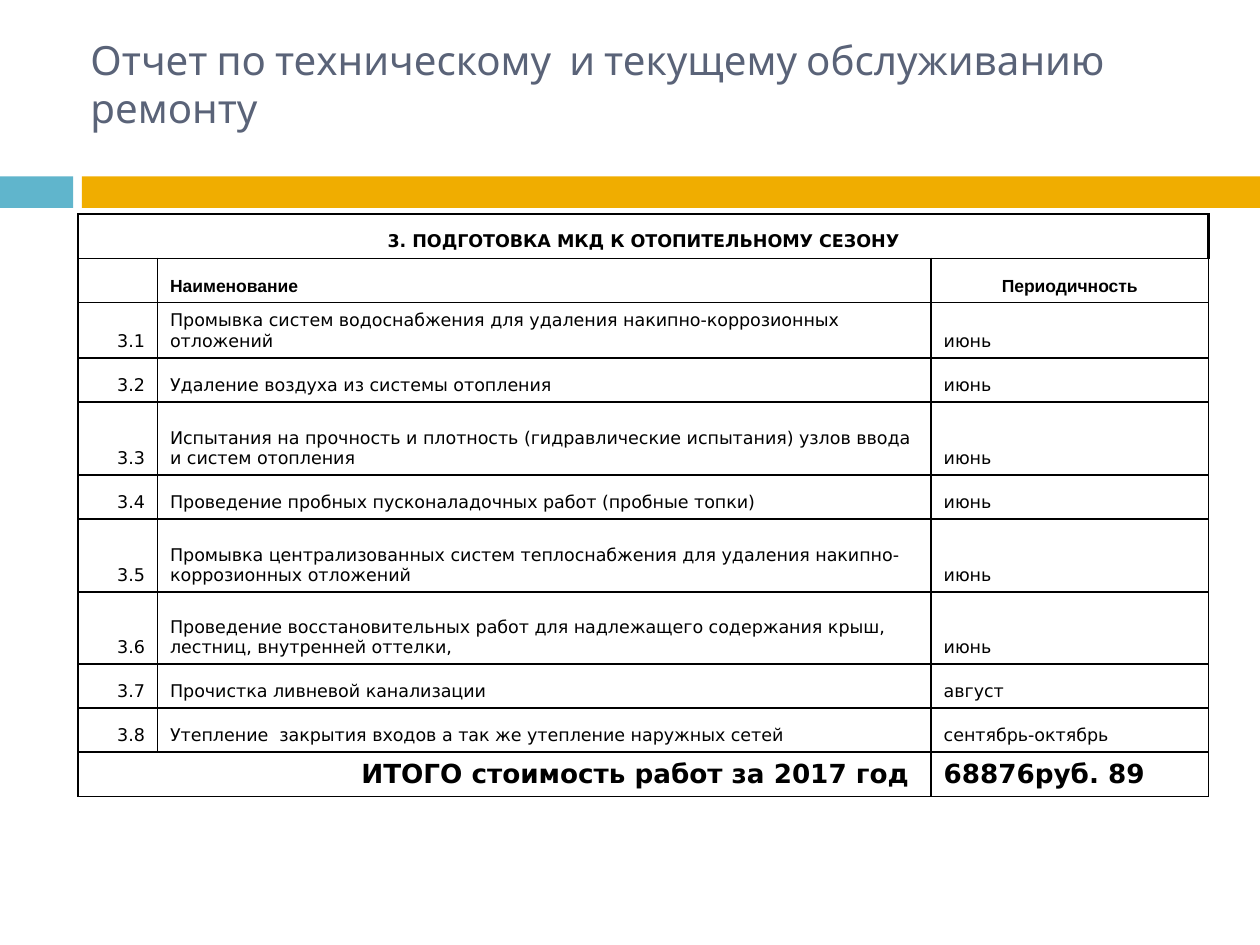
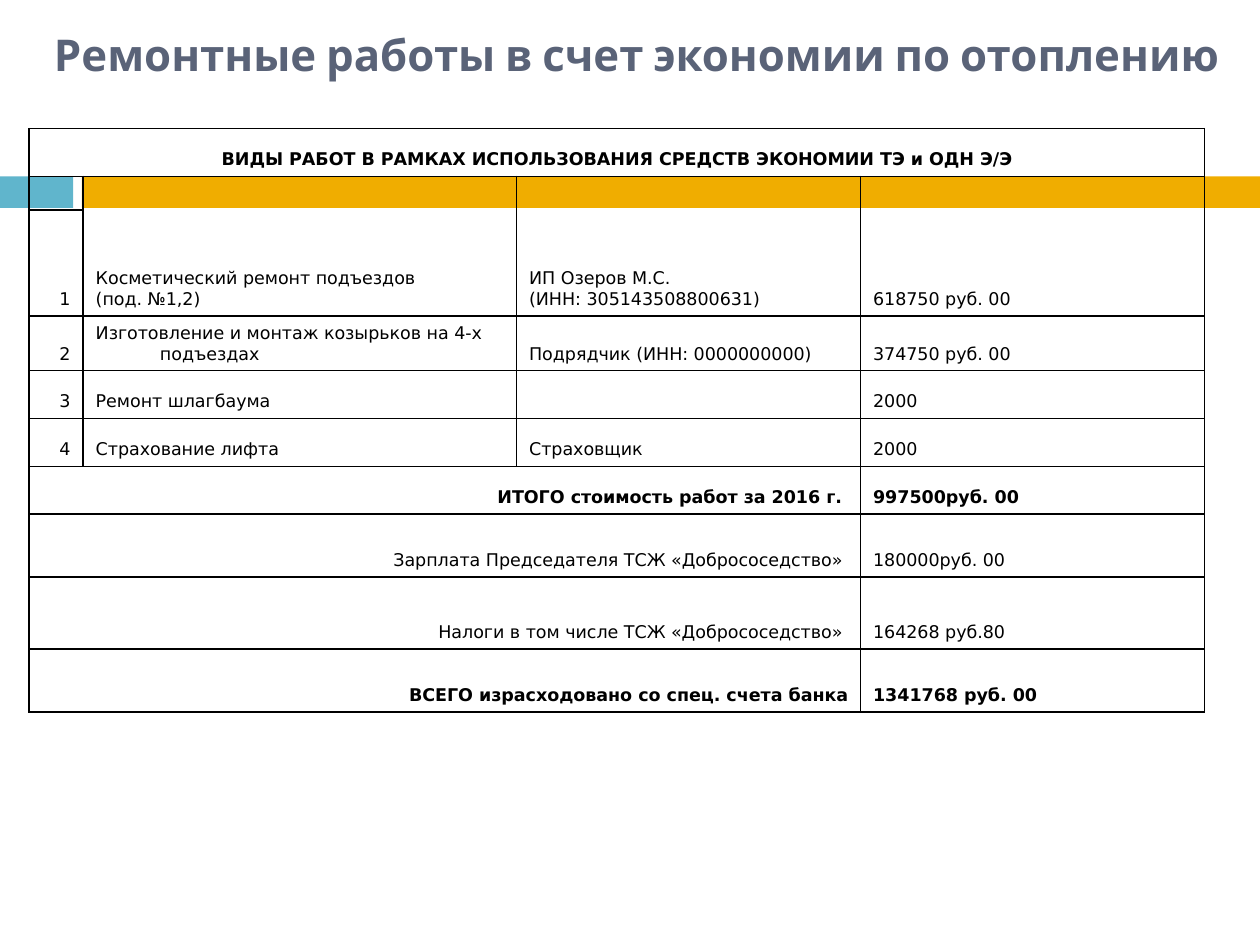
from dataclasses import dataclass
from typing import Optional

from lxml.etree import SubElement
from pptx import Presentation
from pptx.dml.color import RGBColor
from pptx.enum.shapes import MSO_SHAPE
from pptx.enum.text import MSO_ANCHOR, PP_ALIGN
from pptx.oxml.ns import qn
from pptx.util import Emu, Inches, Pt

COLORS = {"teal": "60B5CC", "amber": "F0AD00", "title": "5A6378", "ink": "000000"}
TITLE_FONT, BODY_FONT, HEAD_FONT = "Cabin", "DejaVu Sans", "Arial"
BODY_SIZE, TOTAL_SIZE = 10, 15
LINE, HEAVY_LINE = 1, 2.25
SLIDE_W, SLIDE_H = Inches(10), Inches(7.5)
COLS, ROWS = 100, 75
LEFT, CENTER, RIGHT = PP_ALIGN.LEFT, PP_ALIGN.CENTER, PP_ALIGN.RIGHT


@dataclass(frozen=True)
class Box:
    left: float
    top: float
    width: float
    height: float

    def emu(self) -> tuple[Emu, ...]:
        return (across(self.left), down(self.top), across(self.width), down(self.height))


@dataclass(frozen=True)
class Band:
    box: Box
    color: str


@dataclass(frozen=True)
class Title:
    text: str
    box: Box
    size: int
    bold: bool = False


@dataclass(frozen=True)
class Cell:
    text: str = ""
    align: PP_ALIGN = LEFT
    bold: bool = False
    size: int = BODY_SIZE
    font: str = BODY_FONT
    cols: int = 1
    rows: int = 1


@dataclass(frozen=True)
class Row:
    height: float
    cells: tuple[Optional[Cell], ...]


@dataclass(frozen=True)
class Grid:
    left: float
    top: float
    widths: tuple[float, ...]
    rows: tuple[Row, ...]
    hanging: float = 0
    header_edge: float = LINE


@dataclass(frozen=True)
class Page:
    title: Title
    grid: Grid


def across(cols: float) -> Emu:
    return Emu(round(SLIDE_W * cols / COLS))


def down(rows: float) -> Emu:
    return Emu(round(SLIDE_H * rows / ROWS))


def rgb(name: str) -> RGBColor:
    return RGBColor.from_string(COLORS[name])


def header(height: float, text: str, cols: int) -> Row:
    return Row(height, (Cell(text, CENTER, True, cols=cols),))


def work(height: float, number: str, *texts: str) -> Row:
    return Row(height, (Cell(number, RIGHT), *(Cell(text) for text in texts)))


def total(height: float, cols: int, label: str, value: str,
          bold: bool = True, size: int = BODY_SIZE) -> Row:
    return Row(height, (Cell(label, RIGHT, bold, size, cols=cols),
                        Cell(value, LEFT, bold, size)))


BANDS = (
    Band(Box(0, 14, 5.8, 2.5), "teal"),
    Band(Box(6.5, 14, 93.5, 2.5), "amber"),
)

HEATING = Page(
    Title("Отчет по техническому  и текущему обслуживанию ремонту",
          Box(6.2, 2.3, 85.4, 8.8), 23),
    Grid(6.2, 17, (6.3, 61.4, 22), (
        header(3.5, "3. ПОДГОТОВКА МКД К ОТОПИТЕЛЬНОМУ СЕЗОНУ", 3),
        Row(3.5, (Cell(),
                  Cell("Наименование", LEFT, True, font=HEAD_FONT),
                  Cell("Периодичность", CENTER, True, font=HEAD_FONT))),
        work(4.4, "3.1", "Промывка систем водоснабжения для удаления "
             "накипно-коррозионных отложений", "июнь"),
        work(3.5, "3.2", "Удаление воздуха из системы отопления", "июнь"),
        work(5.8, "3.3", "Испытания на прочность и плотность (гидравлические "
             "испытания) узлов ввода и систем отопления", "июнь"),
        work(3.5, "3.4", "Проведение пробных пусконаладочных работ "
             "(пробные топки)", "июнь"),
        work(5.8, "3.5", "Промывка централизованных систем теплоснабжения "
             "для удаления накипно-коррозионных отложений", "июнь"),
        work(5.7, "3.6", "Проведение восстановительных работ для надлежащего "
             "содержания крыш, лестниц, внутренней оттелки,", "июнь"),
        work(3.5, "3.7", "Прочистка ливневой канализации", "август"),
        work(3.5, "3.8", "Утепление  закрытия входов а так же утепление "
             "наружных сетей", "сентябрь-октябрь"),
        total(3.5, 2, "ИТОГО стоимость работ за 2017 год ", "68876руб. 89",
              size=TOTAL_SIZE),
    ), header_edge=HEAVY_LINE),
)

SAVINGS = Page(
    Title("Ремонтные работы в счет экономии по отоплению",
          Box(3.3, 1.7, 96.7, 6.7), 25, True),
    Grid(2.3, 10.2, (4.3, 34.4, 27.3, 27.3), (
        header(3.8, "ВИДЫ РАБОТ В РАМКАХ ИСПОЛЬЗОВАНИЯ СРЕДСТВ ЭКОНОМИИ "
               "ТЭ и ОДН Э/Э", 4),
        Row(2.6, (Cell(),
                  Cell("Косметический ремонт подъездов\n(под. №1,2)", rows=2),
                  Cell("ИП Озеров М.С.\n(ИНН: 305143508800631)", rows=2),
                  Cell("618750 руб. 00", rows=2))),
        Row(8.4, (Cell("1", RIGHT), None, None, None)),
        work(4.2, "2", "Изготовление и монтаж козырьков на 4-х подъездах",
             "Подрядчик (ИНН: 0000000000)", "374750 руб. 00"),
        work(3.8, "3", "Ремонт шлагбаума", "", "2000"),
        work(3.8, "4", "Страхование лифта", "Страховщик", "2000"),
        total(3.8, 3, "ИТОГО стоимость работ за 2016 г. ", "997500руб. 00"),
        total(5, 3, "Зарплата Председателя ТСЖ «Добрососедство» ",
              "180000руб. 00", False),
        total(5.7, 3, "Налоги в том числе ТСЖ «Добрососедство» ",
              "164268 руб.80", False),
        total(5, 3, "ВСЕГО израсходовано со спец. счета банка",
              "1341768 руб. 00"),
    ), hanging=5.1),
)


def draw_band(slide, band: Band) -> None:
    sp = slide.shapes.add_shape(MSO_SHAPE.RECTANGLE, *band.box.emu())
    sp.shadow.inherit = False
    sp.fill.solid()
    sp.fill.fore_color.rgb = rgb(band.color)
    sp.line.fill.background()


def add_run(p, text: str, font: str, size: int, bold: bool, color: str) -> None:
    r = p.add_run()
    r.text = text
    r.font.name = font
    r.font.size = Pt(size)
    r.font.bold = bold
    r.font.color.rgb = rgb(color)


def draw_title(slide, title: Title) -> None:
    tf = slide.shapes.add_textbox(*title.box.emu()).text_frame
    tf.word_wrap = True
    add_run(tf.paragraphs[0], title.text, TITLE_FONT, title.size, title.bold, "title")


def draw_borders(tc, right: float) -> None:
    tcPr = tc._tc.get_or_add_tcPr()
    for side, width in (("L", LINE), ("R", right), ("T", LINE), ("B", LINE)):
        ln = SubElement(tcPr, qn(f"a:ln{side}"), w=str(Pt(width)))
        fill = SubElement(ln, qn("a:solidFill"))
        SubElement(fill, qn("a:srgbClr"), val=COLORS["ink"])


def write_cell(tc, cell: Cell, hanging: Emu) -> None:
    tf = tc.text_frame
    for i, line in enumerate(cell.text.split("\n")):
        p = tf.add_paragraph() if i else tf.paragraphs[0]
        p.alignment = cell.align
        if hanging:
            pPr = p._p.get_or_add_pPr()
            pPr.set("marL", str(hanging))
            pPr.set("indent", str(-hanging))
        if line:
            add_run(p, line, cell.font, cell.size, cell.bold, "ink")


def draw_grid(slide, grid: Grid) -> None:
    box = Box(grid.left, grid.top, sum(grid.widths), sum(r.height for r in grid.rows))
    table = slide.shapes.add_table(len(grid.rows), len(grid.widths), *box.emu()).table
    table.first_row = table.horz_banding = False
    for column, width in zip(table.columns, grid.widths):
        column.width = across(width)
    for i, row in enumerate(grid.rows):
        table.rows[i].height = down(row.height)
        j = 0
        for cell in row.cells:
            if cell:
                tc = table.cell(i, j)
                write_cell(tc, cell, across(grid.hanging))
                if cell.cols > 1 or cell.rows > 1:
                    tc.merge(table.cell(i + cell.rows - 1, j + cell.cols - 1))
            j += cell.cols if cell else 1
        for tc in table.rows[i].cells:
            tc.vertical_anchor = MSO_ANCHOR.BOTTOM
            draw_borders(tc, LINE if i else grid.header_edge)
            tc.fill.background()
            if not tc.text:
                SubElement(tc.text_frame.paragraphs[0]._p, qn("a:endParaRPr"),
                           sz=str(BODY_SIZE * 100))


def main() -> None:
    prs = Presentation()
    prs.slide_width, prs.slide_height = SLIDE_W, SLIDE_H
    for page in (HEATING, SAVINGS):
        slide = prs.slides.add_slide(prs.slide_layouts[6])
        for band in BANDS:
            draw_band(slide, band)
        draw_title(slide, page.title)
        draw_grid(slide, page.grid)
    prs.save("out.pptx")


if __name__ == "__main__":
    main()
